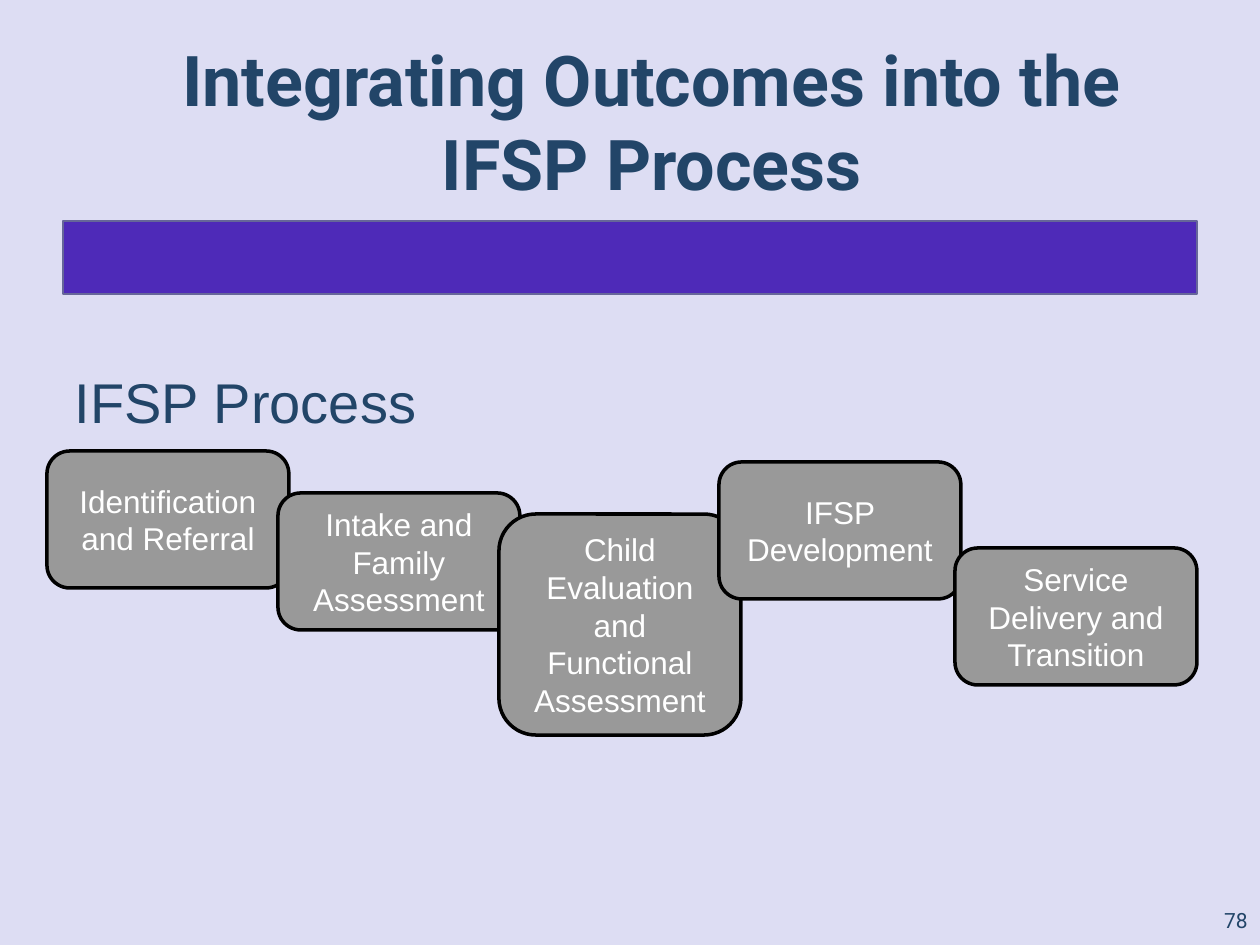
from pptx import Presentation
from pptx.dml.color import RGBColor as RGB
from pptx.enum.shapes import MSO_SHAPE as Shape
from pptx.enum.text import MSO_ANCHOR as Anchor, PP_ALIGN as Align
from pptx.util import Emu, Pt

PX = 914400 / 126
INK = {"back": "DDDDF3", "bar": "4E2AB8", "edge": "666699", "text": "224568",
       "step": "999999", "line": "000000", "white": "FFFFFF"}
TITLE = "Integrating Outcomes into the IFSP Process"
HEAD = "IFSP Process"
PAGE = "78"
WIDE, LOW, TALL = 242, 137, 221
STEPS = [
    ("Identification and Referral", 47, 451, LOW),
    ("Intake and Family Assessment", 278, 493, LOW),
    ("Child Evaluation and Functional Assessment", 499, 514, TALL),
    ("IFSP Development", 719, 462, LOW),
    ("Service Delivery and Transition", 955, 548, LOW),
]


def px(n):
    return Emu(round(n * PX))


def color(name):
    return RGB.from_string(INK[name])


def write(shape, text, size, font, ink, align, anchor=Anchor.MIDDLE, bold=False):
    frame = shape.text_frame
    frame.word_wrap = True
    frame.vertical_anchor = anchor
    para = frame.paragraphs[0]
    para.text = text
    para.alignment = align
    para.font.size = Pt(size)
    para.font.name = font
    para.font.bold = bold
    para.font.color.rgb = color(ink)
    return frame


def label(slide, box, *style, **more):
    return write(slide.shapes.add_textbox(*map(px, box)), *style, **more)


def block(slide, kind, box, fill, line, width):
    shape = slide.shapes.add_shape(kind, *map(px, box))
    shape.shadow.inherit = False
    shape.fill.solid()
    shape.fill.fore_color.rgb = color(fill)
    shape.line.color.rgb = color(line)
    shape.line.width = Pt(width)
    return shape


def main():
    deck = Presentation()
    deck.slide_width, deck.slide_height = px(1260), px(945)
    slide = deck.slides.add_slide(deck.slide_layouts[6])
    back = slide.background.fill
    back.solid()
    back.fore_color.rgb = color("back")

    block(slide, Shape.RECTANGLE, (63, 221, 1134, 73), "bar", "edge", 0.75)
    head = label(slide, (21, 199, 1207, 714), HEAD, 32, "Arial", "text",
                 Align.LEFT, Anchor.TOP)
    head.margin_left, head.margin_top = px(54), px(168)
    label(slide, (1155, 895, 105, 50), PAGE, 12, "Roboto", "text", Align.RIGHT)

    for text, left, top, high in STEPS:
        step = block(slide, Shape.ROUNDED_RECTANGLE, (left, top, WIDE, high),
                     "step", "line", 2)
        write(step, text, 18, "Arial", "white", Align.CENTER)

    label(slide, (95, 42, 1113, 157), TITLE, 40, "Roboto", "text",
          Align.CENTER, bold=True)
    deck.save("out.pptx")


if __name__ == "__main__":
    main()
